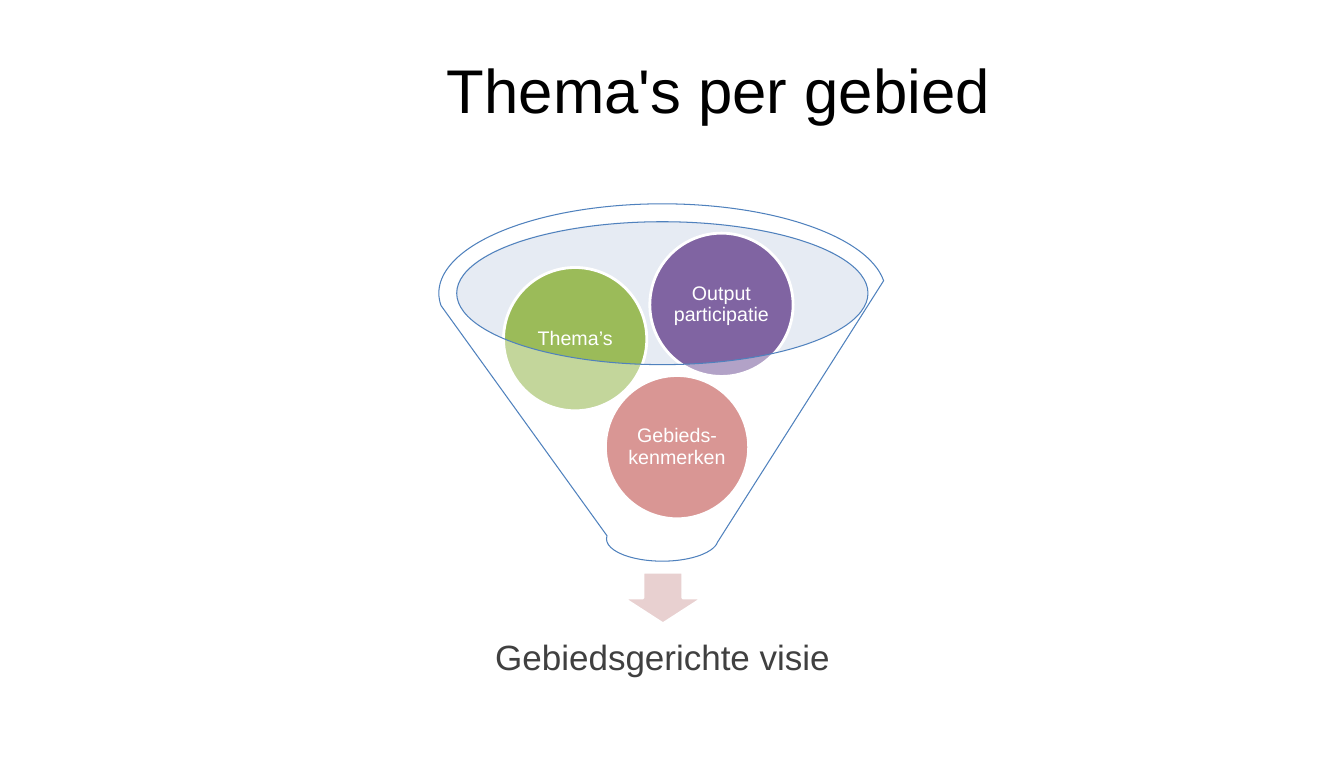
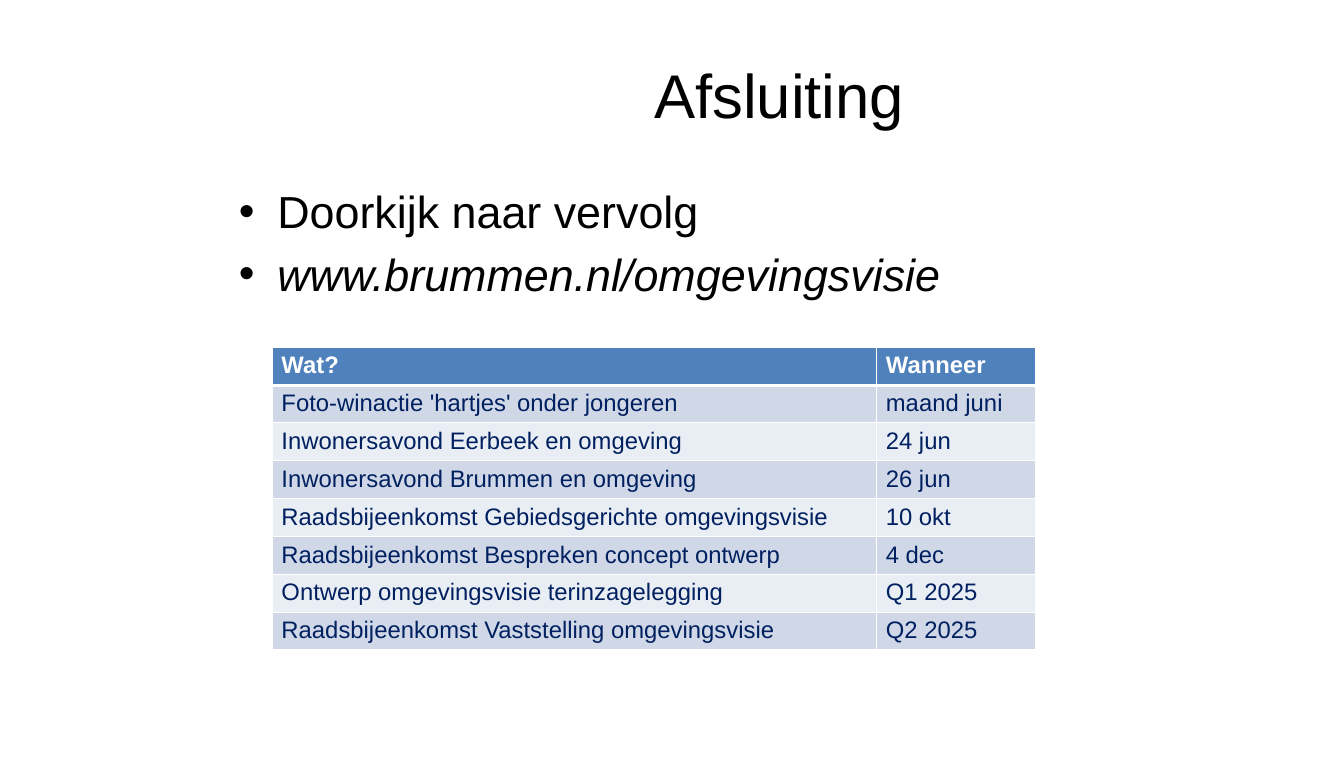
from pptx import Presentation
from pptx.dml.color import RGBColor
from pptx.enum.shapes import MSO_SHAPE
from pptx.enum.text import MSO_ANCHOR, MSO_AUTO_SIZE, PP_ALIGN
from pptx.oxml.ns import qn
from pptx.oxml.xmlchemy import OxmlElement
from pptx.util import Inches, Pt

TOP, MIDDLE = MSO_ANCHOR.TOP, MSO_ANCHOR.MIDDLE
LEFT, CENTER = PP_ALIGN.LEFT, PP_ALIGN.CENTER
OVAL, FUNNEL, DOWN_ARROW = MSO_SHAPE.OVAL, MSO_SHAPE.FUNNEL, MSO_SHAPE.DOWN_ARROW

FONT = "Arial"
BLACK = RGBColor(0x00, 0x00, 0x00)
WHITE = RGBColor(0xFF, 0xFF, 0xFF)
GREY = RGBColor(0x40, 0x40, 0x40)
BLUE = RGBColor(0x4F, 0x81, 0xBD)
MOUTH_BLUE = RGBColor(0xC2, 0xCD, 0xE1)
RED = RGBColor(0xC0, 0x50, 0x4D)
PALE_RED = RGBColor(0xE8, 0xD0, 0xD0)
GREEN = RGBColor(0x9B, 0xBB, 0x59)
PURPLE = RGBColor(0x80, 0x64, 0xA2)
NAVY = RGBColor(0x00, 0x20, 0x60)
BANDS = (RGBColor(0xD0, 0xD8, 0xE8), RGBColor(0xE9, 0xED, 0xF4))

THIN, THICK = 0.83, 2.5
SCHEDULE = [
    ("Wat?", "Wanneer"),
    ("Foto-winactie 'hartjes' onder jongeren", "maand juni"),
    ("Inwonersavond Eerbeek en omgeving", "24 jun"),
    ("Inwonersavond Brummen en omgeving", "26 jun"),
    ("Raadsbijeenkomst Gebiedsgerichte omgevingsvisie", "10 okt"),
    ("Raadsbijeenkomst Bespreken concept ontwerp", "4 dec"),
    ("Ontwerp omgevingsvisie terinzagelegging", "Q1 2025"),
    ("Raadsbijeenkomst Vaststelling omgevingsvisie", "Q2 2025"),
]


def write_text(para, text, size, color=BLACK, align=LEFT, bold=False, italic=False, spacing=None):
    para.alignment = align
    if spacing:
        para.line_spacing = spacing
    span = para.add_run()
    span.text = text
    font = span.font
    font.name, font.size, font.bold, font.italic = FONT, Pt(size), bold, italic
    font.color.rgb = color


def set_frame(frame, anchor=TOP, inset=None):
    frame.word_wrap = True
    frame.auto_size = MSO_AUTO_SIZE.NONE
    frame.vertical_anchor = anchor
    if inset is not None:
        frame.margin_left = frame.margin_right = Inches(inset)
        frame.margin_top = frame.margin_bottom = Inches(inset)
    return frame


def add_titled_slide(deck, title, box, align, anchor):
    page = deck.slides.add_slide(deck.slide_layouts[5])
    holder = page.shapes.title
    holder.left, holder.top, holder.width, holder.height = map(Inches, box)
    frame = set_frame(holder.text_frame, anchor)
    write_text(frame.paragraphs[0], title, 44, align=align)
    return page


def add_figure(page, kind, box, fill, line=None, width=2, opacity=None):
    shape = page.shapes.add_shape(kind, *map(Inches, box))
    shape.shadow.inherit = False
    shape.fill.solid()
    shape.fill.fore_color.rgb = fill
    if opacity:
        alpha = OxmlElement("a:alpha")
        alpha.set("val", str(opacity * 1000))
        shape.element.spPr.find(qn("a:solidFill"))[0].append(alpha)
    if line is None:
        shape.line.fill.background()
    else:
        shape.line.color.rgb = line
        shape.line.width = Pt(width)


def add_label(page, box, text, size, color, inset):
    frame = set_frame(page.shapes.add_textbox(*map(Inches, box)).text_frame, MIDDLE, inset)
    write_text(frame.paragraphs[0], text, size, color, CENTER, spacing=0.9)


def add_funnel_diagram(page, left, top, width, height):
    """Funnel of the given size, with its result below it."""
    middle = left + width / 2
    add_figure(page, OVAL, (left + 0.17, top + 0.17, 4.08, 1.42), MOUTH_BLUE, opacity=40)
    add_figure(page, DOWN_ARROW, (middle - 0.39, top + height + 0.11, 0.79, 0.51), PALE_RED, WHITE)
    add_label(page, (middle - 1.9, top + height + 0.5, 3.8, 0.95),
              "Gebiedsgerichte visie", 25, GREY, 0.19)

    balls = [("Gebieds-kenmerken", RED, 1.65, 1.7),
             ("Thema’s", GREEN, 0.64, 0.63),
             ("Output participatie", PURPLE, 2.09, 0.29)]
    for text, color, across, down in balls:
        box = (left + across, top + down, 1.42, 1.42)
        add_figure(page, OVAL, box, color, WHITE)
        add_label(page, box, text, 14, WHITE, 0.1)

    add_figure(page, FUNNEL, (left, top, width, height), WHITE, BLUE, 0.75, opacity=40)


def add_bullets(page, box, items):
    frame = set_frame(page.shapes.add_textbox(*map(Inches, box)).text_frame)
    for index, (text, italic) in enumerate(items):
        para = frame.add_paragraph() if index else frame.paragraphs[0]
        properties = para._p.get_or_add_pPr()
        properties.set("marL", str(Inches(0.38)))
        properties.set("indent", str(-Inches(0.38)))
        for tag, key, value in (("a:buFont", "typeface", FONT), ("a:buChar", "char", "•")):
            bullet = OxmlElement(tag)
            bullet.set(key, value)
            properties.append(bullet)
        if index:
            para.space_before = Pt(6.4)
        write_text(para, text, 32, italic=italic)


def set_borders(cell, top, bottom):
    properties = cell._tc.get_or_add_tcPr()
    for side, width in (("L", THIN), ("R", THIN), ("T", top), ("B", bottom)):
        line = OxmlElement(f"a:ln{side}")
        line.set("w", str(Pt(width)))
        fill = OxmlElement("a:solidFill")
        color = OxmlElement("a:srgbClr")
        color.set("val", str(WHITE))
        fill.append(color)
        line.append(fill)
        properties.append(line)


def add_schedule(page, left, top, widths, height):
    box = (left, top, sum(widths), height)
    table = page.shapes.add_table(len(SCHEDULE), len(widths), *map(Inches, box)).table
    for column, width in zip(table.columns, widths):
        column.width = Inches(width)
    for row, texts in enumerate(SCHEDULE):
        table.rows[row].height = Inches(height / len(SCHEDULE))
        header = row == 0
        for column, text in enumerate(texts):
            cell = table.cell(row, column)
            set_borders(cell, THICK if row == 1 else THIN, THICK if header else THIN)
            cell.fill.solid()
            cell.fill.fore_color.rgb = BLUE if header else BANDS[(row - 1) % 2]
            cell.margin_left = cell.margin_right = Inches(0.09)
            cell.margin_top = cell.margin_bottom = Inches(0.05)
            write_text(cell.text_frame.paragraphs[0], text, 17,
                       WHITE if header else NAVY, bold=header)


def main():
    deck = Presentation()
    deck.slide_width, deck.slide_height = Inches(13.32), Inches(7.5)

    themes = add_titled_slide(deck, "Thema's per gebied", (4.33, 0.46, 6.87, 0.95), LEFT, TOP)
    add_funnel_diagram(themes, 4.35, 2.02, 4.43, 3.54)

    closing = add_titled_slide(deck, "Afsluiting", (4.38, 0.3, 6.69, 1.25), CENTER, MIDDLE)
    add_bullets(closing, (2.27, 1.77, 9, 1.5),
                [("Doorkijk naar vervolg", False), ("www.brummen.nl/omgevingsvisie", True)])
    add_schedule(closing, 2.7, 3.44, (5.99, 1.57), 3)

    deck.save("out.pptx")


if __name__ == "__main__":
    main()
